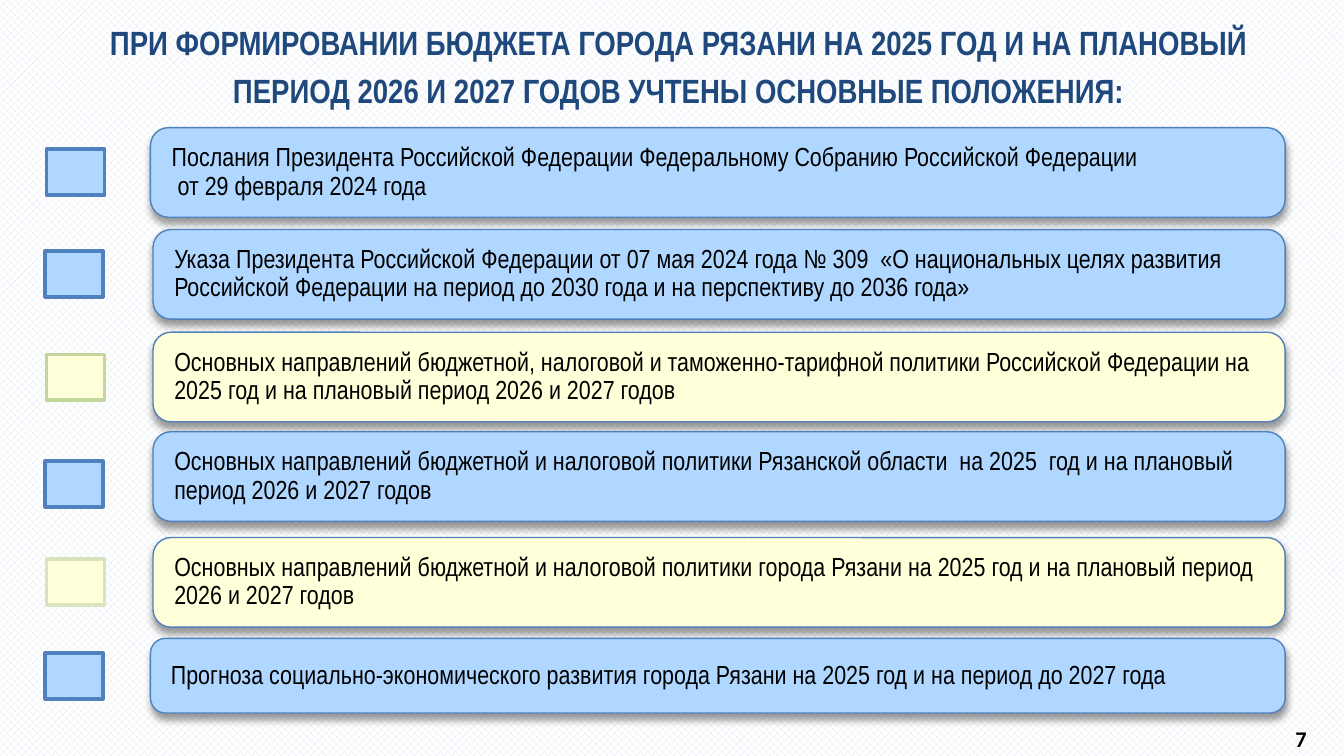
from dataclasses import dataclass

from lxml import etree
from pptx import Presentation
from pptx.dml.color import RGBColor
from pptx.enum.dml import MSO_PATTERN
from pptx.enum.shapes import MSO_SHAPE
from pptx.enum.text import MSO_ANCHOR, PP_ALIGN
from pptx.oxml.ns import qn
from pptx.util import Pt

CHECK = MSO_PATTERN.LARGE_CHECKER_BOARD
RECT, ROUND = MSO_SHAPE.RECTANGLE, MSO_SHAPE.ROUNDED_RECTANGLE
MIDDLE, TOP = MSO_ANCHOR.MIDDLE, MSO_ANCHOR.TOP
LEFT, CENTER = PP_ALIGN.LEFT, PP_ALIGN.CENTER


@dataclass(frozen=True)
class Theme:
    blue: str = "AFD7FF"
    cream: str = "FFFFD9"
    edge: str = "4F81BD"
    green: str = "C3D69B"
    pale: str = "D7E4BD"
    navy: str = "1F497D"
    black: str = "000000"
    white: str = "FFFFFF"
    mist: str = "DCE6F2"
    font: str = "Arial Narrow"
    digit: str = "Calibri"
    head: int = 18
    body: int = 14
    small: int = 12


def color(code):
    return RGBColor.from_string(code)


class Deck:
    """Holds the theme and the slide being drawn."""

    def __init__(self, theme, slide):
        self.theme, self.slide = theme, slide

    def back(self):
        fill = self.slide.background.fill
        fill.patterned()
        fill.pattern = CHECK
        fill.fore_color.rgb = color(self.theme.mist)
        fill.back_color.rgb = color(self.theme.white)

    def label(self, shape, text, size, ink, font, align, anchor, bold=False,
              space=1.0, inset=(7.2, 3.6)):
        frame = shape.text_frame
        frame.word_wrap = True
        frame.vertical_anchor = anchor
        frame.margin_left = frame.margin_right = Pt(inset[0])
        frame.margin_top = frame.margin_bottom = Pt(inset[1])
        frame.text = text
        para = frame.paragraphs[0]
        para.alignment, para.line_spacing = align, space
        para.font.name, para.font.size = font, Pt(size)
        para.font.bold, para.font.color.rgb = bold, color(ink)

    def title(self, text, left, top, width, height):
        shape = self.slide.shapes.title
        shape.left, shape.top = Pt(left), Pt(top)
        shape.width, shape.height = Pt(width), Pt(height)
        self.label(shape, text, self.theme.head, self.theme.navy,
                   self.theme.font, CENTER, MIDDLE, bold=True, space=1.2)

    def box(self, kind, left, top, width, height, fill, line, weight):
        shape = self.slide.shapes.add_shape(
            kind, Pt(left), Pt(top), Pt(width), Pt(height))
        shape.shadow.inherit = False
        shape.fill.solid()
        shape.fill.fore_color.rgb = color(fill)
        shape.line.color.rgb = color(line)
        shape.line.width = Pt(weight)
        return shape

    def shade(self, shape):
        """Give the shape a soft shadow just below it."""
        effects = shape.element.spPr.find(qn("a:effectLst"))
        outer = etree.SubElement(
            effects, qn("a:outerShdw"), blurRad=str(Pt(4)), dist=str(Pt(3)),
            dir="5400000", rotWithShape="0")
        tint = etree.SubElement(outer, qn("a:srgbClr"), val=self.theme.black)
        etree.SubElement(tint, qn("a:alpha"), val="40000")

    def card(self, text, left, top, width, height, fill):
        shape = self.box(ROUND, left, top, width, height, fill,
                         self.theme.edge, 0.75)
        shape.adjustments[0] = 0.2
        self.shade(shape)
        self.label(shape, text, self.theme.body, self.theme.black,
                   self.theme.font, LEFT, MIDDLE, space=0.9, inset=(8.6, 8.6))

    def mark(self, left, top, fill, line):
        self.box(RECT, left, top, 31, 24.5, fill, line, 2)

    def page(self, text, left, top, width, height):
        shape = self.slide.shapes.add_textbox(
            Pt(left), Pt(top), Pt(width), Pt(height))
        self.label(shape, text, self.theme.small, self.theme.black,
                   self.theme.digit, CENTER, TOP, bold=True)


def main():
    show = Presentation()
    show.slide_width, show.slide_height = Pt(720), Pt(405)
    theme = Theme()
    deck = Deck(theme, show.slides.add_slide(show.slide_layouts[5]))
    deck.back()
    deck.title("ПРИ ФОРМИРОВАНИИ БЮДЖЕТА ГОРОДА РЯЗАНИ НА 2025 ГОД И НА ПЛАНОВЫЙ "
               "ПЕРИОД 2026 И 2027 ГОДОВ УЧТЕНЫ ОСНОВНЫЕ ПОЛОЖЕНИЯ:",
               39.6, 4, 648, 58.6)

    blue, cream = (theme.blue, theme.edge), theme.cream
    # Card left, top and height; mark left and top; fill and mark line; text
    rows = [
        (80.6, 68.4, 48, 25, 80, blue,
         "Послания Президента Российской Федерации Федеральному Собранию "
         "Российской Федерации\v от 29 февраля 2024 года"),
        (82, 123, 48, 24.3, 134.5, blue,
         "Указа Президента Российской Федерации от 07 мая 2024 года № 309  "
         "«О национальных целях развития Российской Федерации на период "
         "до 2030 года и на перспективу до 2036 года»"),
        (82, 178, 48, 25, 190, (cream, theme.green),
         "Основных направлений бюджетной, налоговой и таможенно-тарифной "
         "политики Российской Федерации на 2025 год и на плановый период "
         "2026 и 2027 годов"),
        (82, 231.3, 48, 24.3, 247, blue,
         "Основных направлений бюджетной и налоговой политики Рязанской "
         "области  на 2025  год и на плановый период 2026 и 2027 годов"),
        (82, 288, 48, 25, 299.5, (cream, theme.pale),
         "Основных направлений бюджетной и налоговой политики города Рязани "
         "на 2025 год и на плановый период 2026 и 2027 годов"),
        (80.6, 342, 40, 24.3, 350, blue,
         "Прогноза социально-экономического развития города Рязани "
         "на 2025 год и на период до 2027 года"),
    ]
    right = 688.5
    for left, top, height, side, level, (fill, line), text in rows:
        deck.card(text, left, top, right - left, height, fill)
        deck.mark(side, level, fill, line)
    deck.page("7", 673, 385.2, 48, 18.7)
    show.save("out.pptx")


if __name__ == "__main__":
    main()
